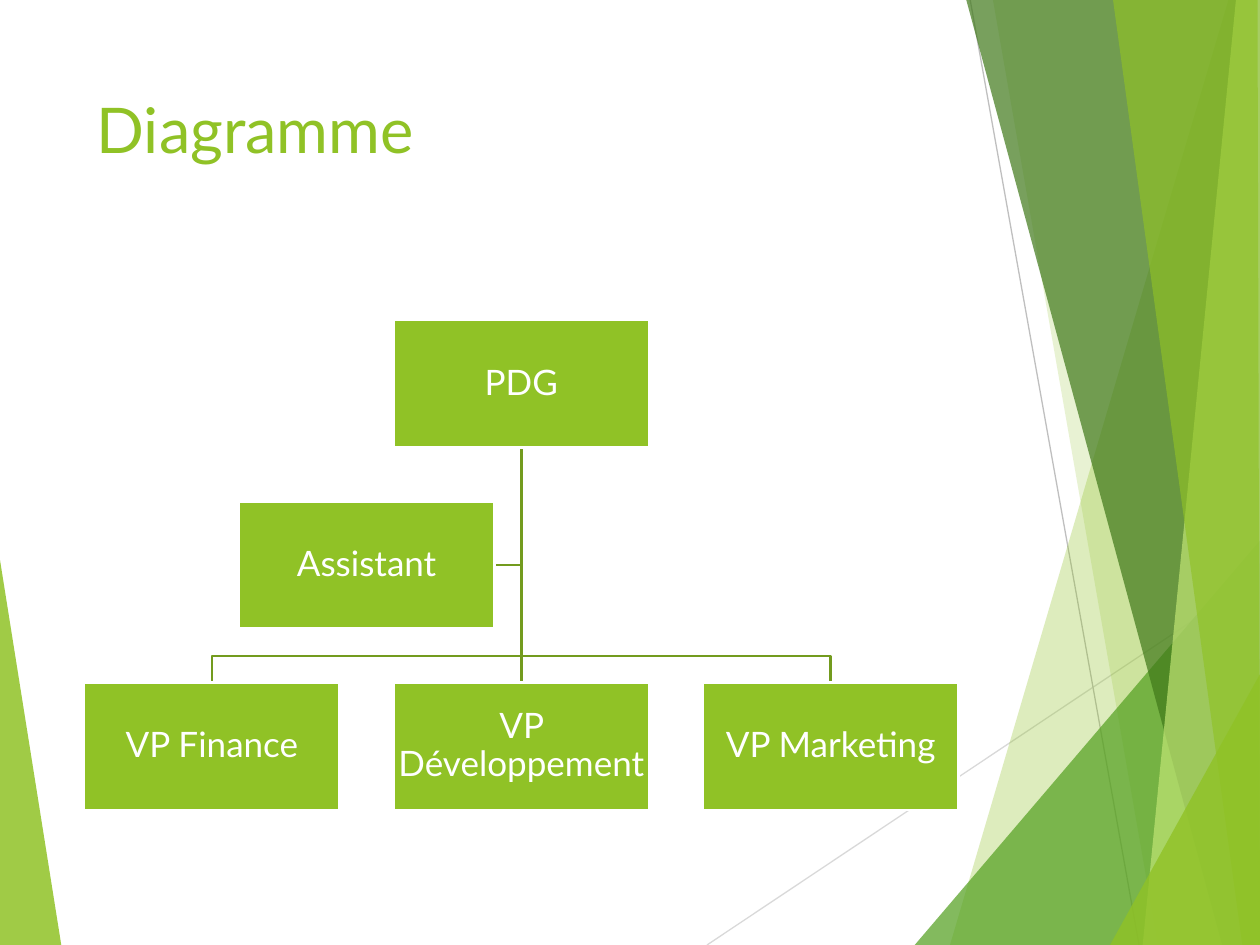
from dataclasses import dataclass

from lxml import etree
from pptx import Presentation
from pptx import util as u
from pptx.dml.color import RGBColor
from pptx.enum import shapes, text
from pptx.oxml.ns import qn

Point = tuple[float, float]

COLOURS = {
    "lime": "90C226",
    "leaf": "54A021",
    "forest": "3F7819",
    "pale": "C0E474",
    "branch": "739B1E",
    "light_ray": "D9D9D9",
    "dark_ray": "BFBFBF",
    "white": "FFFFFF",
}
WIDTH, HEIGHT = 720, 540
BOX_WIDTH, BOX_HEIGHT = 146, 72.8
ROW_TOP, ROW_PITCH = 182.9, 103.6
COLUMN_LEFT, COLUMN_PITCH = 48.1, 176.8
BUS_RISE = 15.3


@dataclass(frozen=True)
class Facet:
    points: tuple[Point, ...]
    colour: str
    opacity: int


@dataclass(frozen=True)
class Ray:
    start: Point
    end: Point
    colour: str


@dataclass(frozen=True)
class Post:
    label: str
    column: float
    row: int

    @property
    def left(self) -> float:
        return COLUMN_LEFT + self.column * COLUMN_PITCH

    @property
    def top(self) -> float:
        return ROW_TOP + self.row * ROW_PITCH

    @property
    def centre(self) -> float:
        return self.left + BOX_WIDTH / 2


LEFT_FACET = Facet(((0, 320), (35, HEIGHT), (0, HEIGHT)), "lime", 85)
RAYS = (
    Ray((404, HEIGHT), (WIDTH, 329), "light_ray"),
    Ray((554.4, 0), (650.9, HEIGHT), "dark_ray"),
)
RIGHT_FACETS = (
    Facet(((702, 0), (542.9, HEIGHT), (WIDTH, HEIGHT), (WIDTH, 0)), "lime", 30),
    Facet(((567.4, 0), (661.7, HEIGHT), (WIDTH, HEIGHT), (WIDTH, 0)), "lime", 20),
    Facet(((522.7, HEIGHT), (WIDTH, 308.9), (WIDTH, HEIGHT)), "leaf", 72),
    Facet(((552.2, 0), (698.4, HEIGHT), (WIDTH, HEIGHT), (WIDTH, 0)), "forest", 70),
    Facet(((706.3, 0), (653, HEIGHT), (WIDTH, HEIGHT), (WIDTH, 0)), "pale", 70),
    Facet(((636, 0), (709.9, HEIGHT), (WIDTH, HEIGHT), (718.6, 0)), "lime", 65),
    Facet(((634.3, HEIGHT), (WIDTH, 385.2), (WIDTH, HEIGHT)), "lime", 80),
)
CHIEF = Post("PDG", 1, 0)
ASSISTANT = Post("Assistant", 0.5, 1)
FINANCE, DEVELOPMENT, MARKETING = (
    Post(label, column, 2)
    for column, label in enumerate(("VP Finance", "VP Développement", "VP Marketing"))
)


def rgb(name: str) -> RGBColor:
    return RGBColor.from_string(COLOURS[name])


def apply(target, formats: dict) -> None:
    for name, value in formats.items():
        setattr(target, name, value)


def draw_path(slide, points: tuple[Point, ...], closed: bool):
    start, *rest = [(u.Pt(x), u.Pt(y)) for x, y in points]
    builder = slide.shapes.build_freeform(*start, scale=1.0)
    builder.add_line_segments(rest, close=closed)
    outline = builder.convert_to_shape()
    outline.shadow.inherit = False
    return outline


def draw_facet(slide, facet: Facet) -> None:
    pane = draw_path(slide, facet.points, True)
    pane.fill.solid()
    pane.fill.fore_color.rgb = rgb(facet.colour)
    pane.line.fill.background()
    tint = pane.element.spPr.find(qn("a:solidFill"))[0]
    etree.SubElement(tint, qn("a:alpha"), val=str(facet.opacity * 1000))


def draw_line(slide, start: Point, end: Point, colour: str, weight: float):
    line = slide.shapes.add_connector(
        shapes.MSO_CONNECTOR.STRAIGHT, *(u.Pt(value) for value in (*start, *end))
    )
    line.line.color.rgb = rgb(colour)
    line.line.width = u.Pt(weight)
    etree.SubElement(line.element.spPr, qn("a:effectLst"))
    return line


def draw_branch(slide, points: tuple[Point, ...]) -> None:
    branch = draw_path(slide, points, False)
    branch.fill.background()
    branch.line.color.rgb = rgb("branch")
    branch.line.width = u.Pt(1.5)


def write(frame, words: str, size: float, colour: str, formats: dict):
    apply(frame, {"word_wrap": True, **formats})
    paragraph = frame.paragraphs[0]
    run = paragraph.add_run()
    run.text = words
    apply(run.font, {"name": "Lato", "size": u.Pt(size)})
    run.font.color.rgb = rgb(colour)
    return paragraph


def draw_post(slide, post: Post):
    box = slide.shapes.add_shape(
        shapes.MSO_SHAPE.RECTANGLE,
        *(u.Pt(value) for value in (post.left, post.top, BOX_WIDTH, BOX_HEIGHT)),
    )
    box.shadow.inherit = False
    box.fill.solid()
    box.fill.fore_color.rgb = rgb("lime")
    box.line.color.rgb = rgb("white")
    box.line.width = u.Pt(1.5)
    sides = ("left", "right", "top", "bottom")
    formats = {f"margin_{side}": u.Pt(0.9) for side in sides}
    formats["vertical_anchor"] = text.MSO_ANCHOR.MIDDLE
    label = write(box.text_frame, post.label, 20, "white", formats)
    apply(label, {"alignment": text.PP_ALIGN.CENTER, "line_spacing": 0.9})
    return box


def draw_chart(slide) -> None:
    trunk_top = (CHIEF.centre, CHIEF.top + BOX_HEIGHT)
    level = ASSISTANT.top + BOX_HEIGHT / 2
    draw_branch(
        slide,
        (trunk_top, (CHIEF.centre, level), (ASSISTANT.left + BOX_WIDTH, level)),
    )
    bus = DEVELOPMENT.top - BUS_RISE
    for post in (MARKETING, FINANCE):
        draw_branch(
            slide,
            (trunk_top, (CHIEF.centre, bus), (post.centre, bus), (post.centre, post.top)),
        )
    posts = (CHIEF, FINANCE, DEVELOPMENT, MARKETING, ASSISTANT)
    boxes = {post: draw_post(slide, post) for post in posts}
    trunk_end = (DEVELOPMENT.centre, DEVELOPMENT.top)
    trunk = draw_line(slide, trunk_top, trunk_end, "branch", 1.5)
    trunk.begin_connect(boxes[CHIEF], 2)
    trunk.end_connect(boxes[DEVELOPMENT], 0)
    boxes[CHIEF].element.addprevious(trunk.element)


def main() -> None:
    deck = Presentation()
    apply(deck, {"slide_width": u.Pt(WIDTH), "slide_height": u.Pt(HEIGHT)})
    slide = deck.slides.add_slide(deck.slide_layouts[6])
    draw_facet(slide, LEFT_FACET)
    for ray in RAYS:
        draw_line(slide, ray.start, ray.end, ray.colour, 0.75)
    for facet in RIGHT_FACETS:
        draw_facet(slide, facet)
    title = slide.shapes.add_textbox(*(u.Pt(value) for value in (48.2, 48.2, 500, 104)))
    write(title.text_frame, "Diagramme", 36, "lime", {"vertical_anchor": text.MSO_ANCHOR.TOP})
    draw_chart(slide)
    deck.save("out.pptx")


if __name__ == "__main__":
    main()
